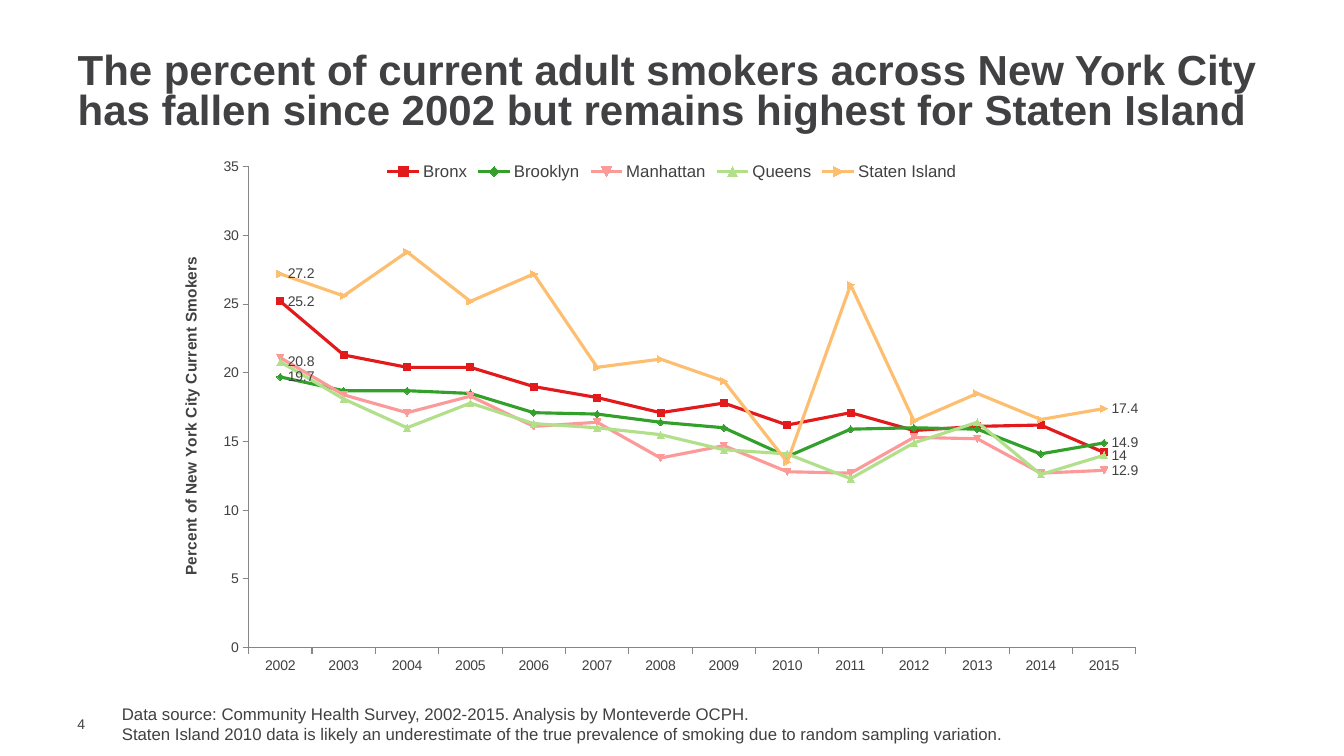
from lxml import etree
from pptx import Presentation
from pptx.chart.data import CategoryChartData
from pptx.dml.color import RGBColor
from pptx.enum.chart import (XL_CHART_TYPE, XL_LABEL_POSITION, XL_LEGEND_POSITION,
                             XL_MARKER_STYLE, XL_TICK_MARK)
from pptx.enum.text import MSO_ANCHOR, MSO_AUTO_SIZE, PP_ALIGN
from pptx.oxml.ns import qn
from pptx.util import Inches, Pt

LINE_MARKERS = XL_CHART_TYPE.LINE_MARKERS
LABEL_RIGHT = XL_LABEL_POSITION.RIGHT
LEGEND_TOP = XL_LEGEND_POSITION.TOP
MARKER_AUTO = XL_MARKER_STYLE.AUTOMATIC
TICK_OUT = XL_TICK_MARK.OUTSIDE
TICK_NONE = XL_TICK_MARK.NONE
MIDDLE, TOP = MSO_ANCHOR.MIDDLE, MSO_ANCHOR.TOP
LEFT = PP_ALIGN.LEFT
NO_FIT = MSO_AUTO_SIZE.NONE

FONT = "Arial"
COLORS = {
    "text": "414042",
    "axis": "868686",
    "Bronx": "E31A1C",
    "Brooklyn": "33A02C",
    "Manhattan": "FB9A99",
    "Queens": "B2DF8A",
    "Staten Island": "FDBF6F",
}
YEARS = [str(year) for year in range(2002, 2016)]
FIRST, LAST = 0, len(YEARS) - 1
SMOKERS = {
    "Bronx": [25.2, 21.3, 20.4, 20.4, 19, 18.2, 17.1, 17.8, 16.2, 17.1, 15.8, 16.1, 16.2, 14.2],
    "Brooklyn": [19.7, 18.7, 18.7, 18.5, 17.1, 17, 16.4, 16, 13.9, 15.9, 16, 15.9, 14.1, 14.9],
    "Manhattan": [21.1, 18.4, 17.1, 18.3, 16.1, 16.4, 13.8, 14.7, 12.8, 12.7, 15.3, 15.2, 12.7, 12.9],
    "Queens": [20.8, 18.1, 16, 17.8, 16.3, 16, 15.5, 14.4, 14.1, 12.3, 14.9, 16.4, 12.6, 14],
    "Staten Island": [27.2, 25.6, 28.8, 25.2, 27.2, 20.4, 21, 19.4, 13.5, 26.4, 16.5, 18.5, 16.6, 17.4],
}
LABELED = {
    "Bronx": [FIRST],
    "Brooklyn": [FIRST, LAST],
    "Manhattan": [LAST],
    "Queens": [FIRST, LAST],
    "Staten Island": [FIRST, LAST],
}
PLOT_AREA = {"x": 0.072, "y": 0.029, "w": 0.897, "h": 0.897}


def color(name):
    return RGBColor.from_string(COLORS[name])


def set_font(font, size, bold=False):
    font.name = FONT
    font.size = Pt(size)
    font.bold = bold
    font.color.rgb = color("text")


def write(tf, lines, size, bold=False, anchor=TOP, spacing=None):
    tf.word_wrap = True
    tf.auto_size = NO_FIT
    tf.vertical_anchor = anchor
    tf.text = "\n".join(lines)
    for p in tf.paragraphs:
        p.alignment = LEFT
        p.line_spacing = spacing
        set_font(p.font, size, bold)


def add_title(s, text):
    sp = s.shapes.title
    sp.left, sp.top, sp.width, sp.height = (Inches(n) for n in (0.67, 0.47, 12, 0.91))
    write(sp.text_frame, [text], 30, True, MIDDLE, 0.8)


def add_text(s, box, lines, size, anchor=TOP):
    sp = s.shapes.add_textbox(*(Inches(n) for n in box))
    write(sp.text_frame, lines, size, anchor=anchor)
    return sp.text_frame


def style_axis(axis):
    axis.has_major_gridlines = False
    axis.major_tick_mark = TICK_OUT
    axis.minor_tick_mark = TICK_NONE
    axis.format.line.color.rgb = color("axis")
    axis.format.line.width = Pt(0.75)
    set_font(axis.tick_labels.font, 10)


def style_series(series):
    rgb = color(series.name)
    series.smooth = False
    series.format.line.color.rgb = rgb
    series.format.line.width = Pt(2.25)
    marker = series.marker
    marker.style = MARKER_AUTO
    marker.size = 5
    marker.format.fill.solid()
    marker.format.fill.fore_color.rgb = rgb
    marker.format.line.color.rgb = rgb
    series.data_labels.show_value = False
    for index in LABELED[series.name]:
        label = series.points[index].data_label
        set_font(label.font, 10)
        label.position = LABEL_RIGHT


def fix_plot_area(chart):
    plot_area = chart._chartSpace.chart.plotArea
    for old in plot_area.findall(qn("c:layout")):
        plot_area.remove(old)
    layout = etree.Element(qn("c:layout"))
    manual = etree.SubElement(layout, qn("c:manualLayout"))
    settings = {"layoutTarget": "inner", "xMode": "edge", "yMode": "edge", **PLOT_AREA}
    for tag, value in settings.items():
        etree.SubElement(manual, qn(f"c:{tag}")).set("val", str(value))
    plot_area.insert(0, layout)


def add_smokers_chart(s):
    data = CategoryChartData()
    data.categories = YEARS
    for borough, values in SMOKERS.items():
        data.add_series(borough, values)
    box = (Inches(n) for n in (1.76, 1.5, 9.81, 5.32))
    chart = s.shapes.add_chart(LINE_MARKERS, *box, data).chart
    chart.has_title = False
    set_font(chart.font, 10)
    chart.has_legend = True
    chart.legend.position = LEGEND_TOP
    chart.legend.include_in_layout = False
    set_font(chart.legend.font, 12)
    plot = chart.plots[0]
    plot.vary_by_categories = False
    for series in plot.series:
        style_series(series)

    style_axis(chart.category_axis)
    axis = chart.value_axis
    style_axis(axis)
    axis.minimum_scale, axis.maximum_scale, axis.major_unit = 0, 35, 5
    tf = axis.axis_title.text_frame
    tf.text = "Percent of New York City Current Smokers"
    set_font(tf.paragraphs[0].font, 11, True)
    body = tf._txBody.find(qn("a:bodyPr"))
    body.set("rot", "-5400000")
    body.set("vert", "horz")
    fix_plot_area(chart)


def main():
    prs = Presentation()
    prs.slide_width, prs.slide_height = Inches(13.33), Inches(7.5)
    s = prs.slides.add_slide(prs.slide_layouts[5])
    add_title(s, "The percent of current adult smokers across New York City "
                 "has fallen since 2002 but remains highest for Staten Island")
    add_smokers_chart(s)
    add_text(s, (1.11, 6.93, 9.71, 0.5), [
        "Data source: Community Health Survey, 2002-2015. Analysis by Monteverde OCPH.",
        "Staten Island 2010 data is likely an underestimate of the true prevalence "
        "of smoking due to random sampling variation.",
    ], 12)
    number = add_text(s, (0.67, 7.1, 0.43, 0.17), ["4"], 10, MIDDLE)
    number.margin_top = number.margin_bottom = number.margin_right = 0
    prs.save("out.pptx")


if __name__ == "__main__":
    main()
